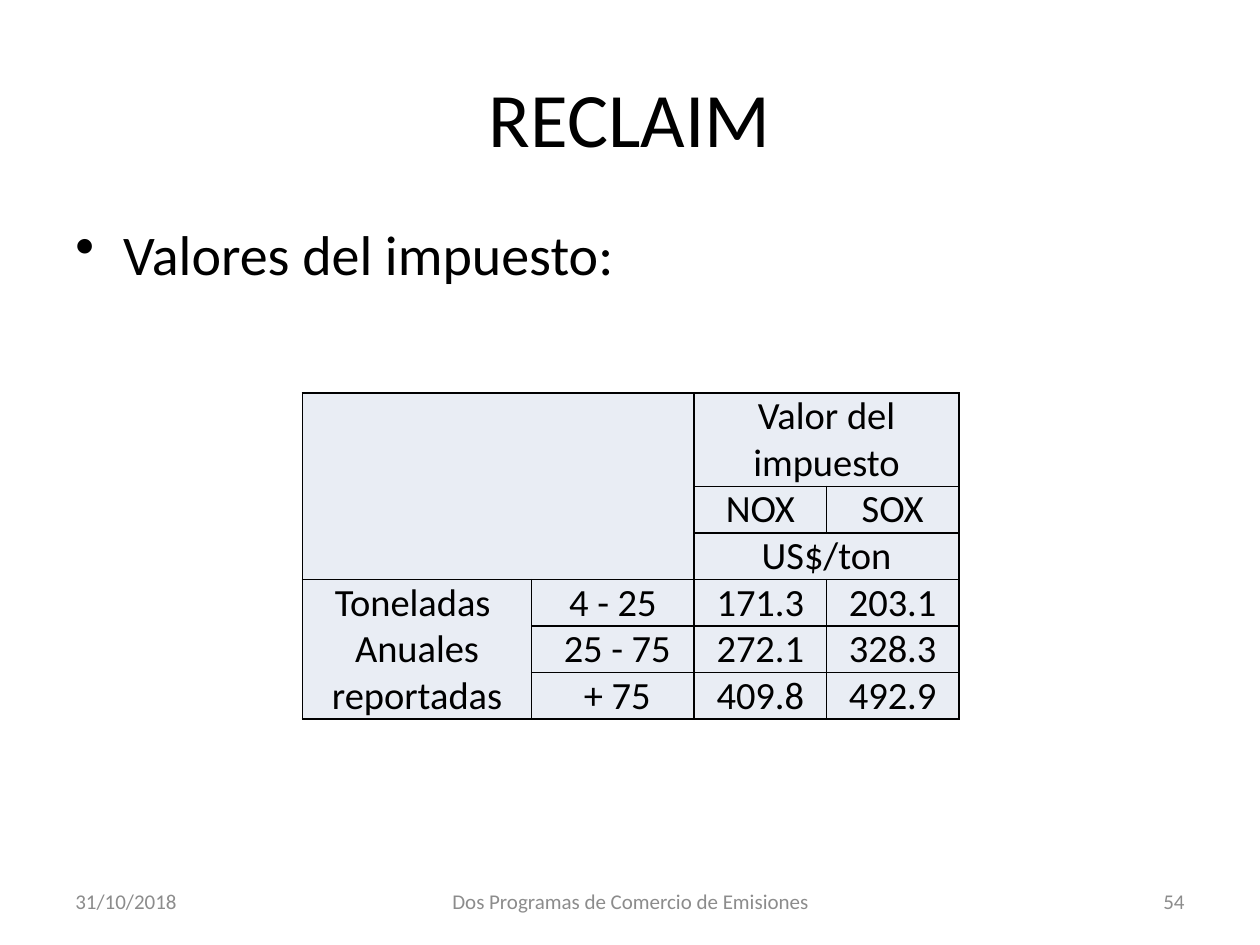
"""Build the RECLAIM tax value slide."""
from typing import NamedTuple

from lxml import etree
from pptx import Presentation
from pptx.dml.color import RGBColor
from pptx.enum import text as t
from pptx.oxml import ns
from pptx.util import Inches, Pt

FONT, BLACK, GREY, PALE = "Calibri", "000000", "8C8C8C", "E9EDF4"
LEFT, MID, RIGHT, JUST = (t.PP_ALIGN.LEFT, t.PP_ALIGN.CENTER,
                          t.PP_ALIGN.RIGHT, t.PP_ALIGN.JUSTIFY)


class Label(NamedTuple):
    text: str
    left: float
    top: float
    width: float
    height: float
    size: float
    color: str = BLACK
    align: t.PP_ALIGN = MID
    anchor: t.MSO_ANCHOR = t.MSO_ANCHOR.MIDDLE


class Span(NamedTuple):
    row: int
    col: int
    last_row: int
    last_col: int


TITLE = Label("RECLAIM", 0.5, 0.3, 9, 1.25, 44)
BODY = Label("Valores del impuesto:", 0.5, 1.75, 9, 4.95, 32,
             align=JUST, anchor=t.MSO_ANCHOR.TOP)
FOOT = [
    Label("31/10/2018", 0.5, 6.95, 2.33, 0.4, 12, GREY, LEFT),
    Label("Dos Programas de Comercio de Emisiones", 3.42, 6.95, 3.17, 0.4, 12, GREY),
    Label("54", 7.17, 6.95, 2.33, 0.4, 12, GREY, RIGHT),
]
COLS = [1.82, 1.29, 1.05, 1.05]
ROWS = [0.74] + [0.37] * 5
CELLS = [
    ["", "", "Valor del impuesto", ""],
    ["", "", "NOX", "SOX"],
    ["", "", "US$/ton", ""],
    ["Toneladas \nAnuales reportadas", "4 - 25", "171.3", "203.1"],
    ["", " 25 - 75", "272.1", "328.3"],
    ["", " + 75", "409.8", "492.9"],
]
SPANS = [Span(0, 0, 2, 1), Span(0, 2, 0, 3), Span(2, 2, 2, 3), Span(3, 0, 5, 0)]


def rgb(code: str) -> RGBColor:
    return RGBColor.from_string(code)


def style(para, size: float, color: str, align: t.PP_ALIGN) -> None:
    para.alignment = align
    para.font.name = FONT
    para.font.size = Pt(size)
    para.font.color.rgb = rgb(color)


def add_label(slide, label: Label):
    box = slide.shapes.add_textbox(*map(Inches, label[1:5]))
    frame = box.text_frame
    frame.word_wrap = True
    frame.vertical_anchor = label.anchor
    frame.text = label.text
    para = frame.paragraphs[0]
    style(para, label.size, label.color, label.align)
    return para


def add_bullet(para) -> None:
    para.line_spacing = 0.9
    para.space_before = Pt(6.4)
    props = para._p.get_or_add_pPr()
    props.set("marL", str(Inches(0.38)))
    props.set("indent", str(-Inches(0.38)))
    mark = etree.Element(ns.qn("a:buChar"), char="•")
    props.find(ns.qn("a:defRPr")).addprevious(mark)


def add_edges(cell) -> None:
    props = cell._tc.get_or_add_tcPr()
    for side in "LRTB":
        line = etree.SubElement(props, ns.qn(f"a:ln{side}"), w=str(Pt(1)))
        fill = etree.SubElement(line, ns.qn("a:solidFill"))
        etree.SubElement(fill, ns.qn("a:srgbClr"), val=BLACK)


def fill_cell(cell, words: str, anchor: t.MSO_ANCHOR) -> None:
    cell.margin_left = cell.margin_right = cell.margin_top = cell.margin_bottom = 0
    cell.vertical_anchor = anchor
    add_edges(cell)
    cell.fill.solid()
    cell.fill.fore_color.rgb = rgb(PALE)
    cell.text = words
    for para in cell.text_frame.paragraphs:
        style(para, 22, BLACK, MID)


def add_grid(slide) -> None:
    area = map(Inches, (2.4, 3.12, sum(COLS), sum(ROWS)))
    table = slide.shapes.add_table(len(ROWS), len(COLS), *area).table
    table.first_row = table.horz_banding = False
    for col, width in zip(table.columns, COLS):
        col.width = Inches(width)
    for row, height in zip(table.rows, ROWS):
        row.height = Inches(height)
    for r, line in enumerate(CELLS):
        anchor = t.MSO_ANCHOR.MIDDLE if r else t.MSO_ANCHOR.BOTTOM
        for c, words in enumerate(line):
            fill_cell(table.cell(r, c), words, anchor)
    for span in SPANS:
        table.cell(span.row, span.col).merge(table.cell(span.last_row, span.last_col))


def main() -> None:
    deck = Presentation()
    deck.slide_width, deck.slide_height = Inches(10), Inches(7.5)
    slide = deck.slides.add_slide(deck.slide_layouts[6])
    add_label(slide, TITLE)
    add_bullet(add_label(slide, BODY))
    for label in FOOT:
        add_label(slide, label)
    add_grid(slide)
    deck.save("out.pptx")


if __name__ == "__main__":
    main()
